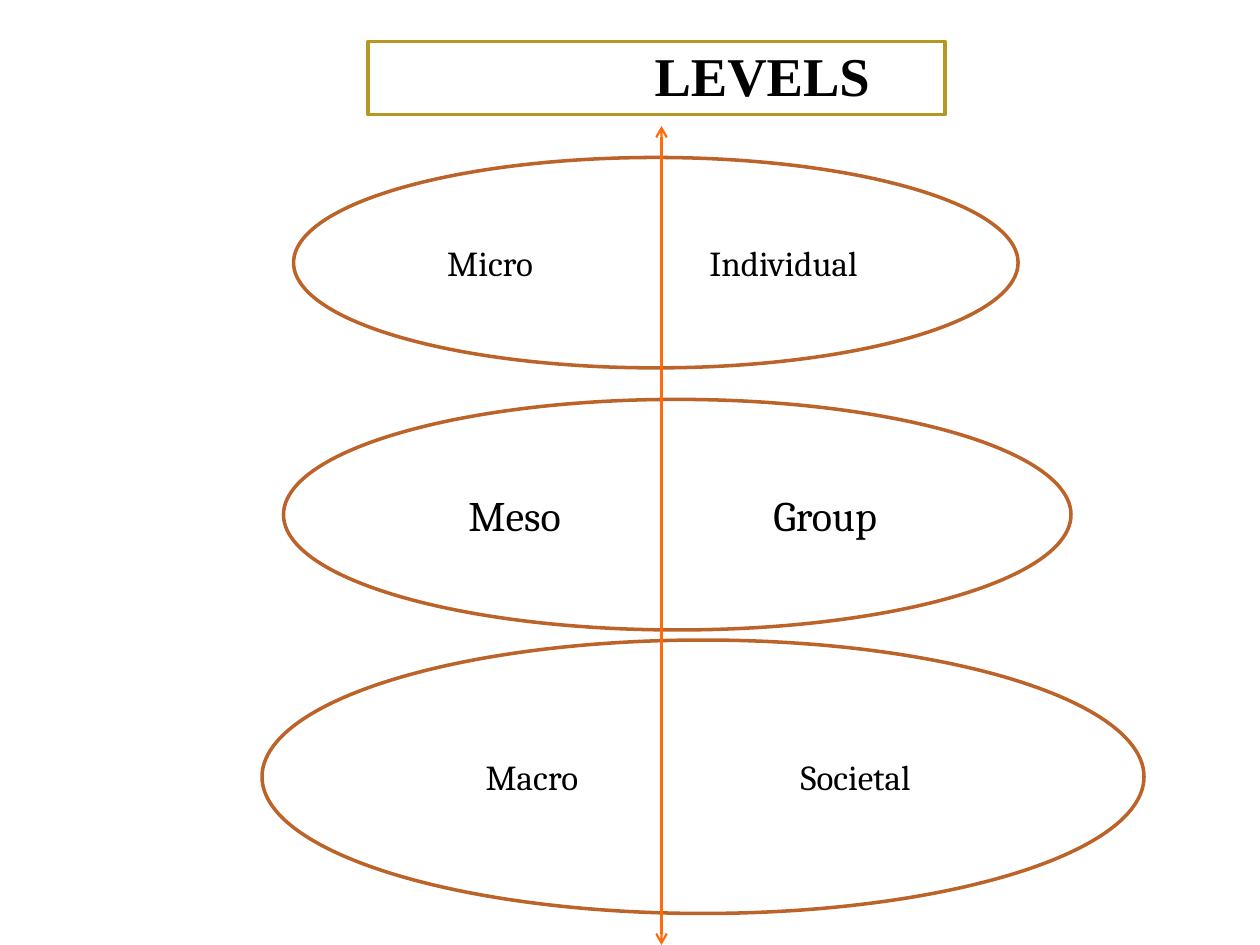
from lxml.etree import SubElement
from pptx import Presentation
from pptx.dml.color import RGBColor
from pptx.enum.shapes import MSO_CONNECTOR, MSO_SHAPE
from pptx.enum.text import MSO_ANCHOR, MSO_AUTO_SIZE, PP_ALIGN
from pptx.oxml.ns import qn
from pptx.util import Inches, Pt

BLACK = RGBColor(0x00, 0x00, 0x00)
GOLD = RGBColor(0xB5, 0x98, 0x21)
RUST = RGBColor(0xBC, 0x63, 0x29)
ORANGE = RGBColor(0xFF, 0x6B, 0x0A)
OVAL_INSET = 0.15
LEVELS = [
    ("Micro", "Individual", 20, (2.33, 1.25, 5.75, 1.67), (3.57, 5.65)),
    ("Macro", "Societal", 20, (2.08, 5.08, 7, 2.17), (3.88, 6.38)),
    ("Meso", "Group", 24, (2.25, 3.17, 6.25, 1.83), (3.74, 6.16)),
]


class Deck:
    """Holds the style and the current slide, and draws each kind of element."""

    def __init__(self):
        self.prs = Presentation()
        self.prs.slide_width = Inches(10)
        self.prs.slide_height = Inches(7.5)
        self.slide = self.prs.slides.add_slide(self.prs.slide_layouts[5])

    def border(self, shape, color, width):
        shape.line.color.rgb = color
        shape.line.width = Pt(width)

    def add_text(self, para, text, font, size, bold=False):
        run = para.add_run()
        run.text = text
        run.font.name = font
        run.font.size = Pt(size)
        run.font.bold = bold
        run.font.color.rgb = BLACK

    def title(self, text, box, inset):
        shape = self.slide.shapes.title
        shape.left, shape.top, shape.width, shape.height = map(Inches, box)
        self.border(shape, GOLD, 2)
        frame = shape.text_frame
        frame.auto_size = MSO_AUTO_SIZE.NONE
        frame.vertical_anchor = MSO_ANCHOR.BOTTOM
        frame.margin_left = Inches(inset)
        para = frame.paragraphs[0]
        para.alignment = PP_ALIGN.CENTER
        para.line_spacing = 0.9
        self.add_text(para, text, "Times New Roman", 31.2, True)

    def oval(self, scale, unit, size, box, starts):
        shape = self.slide.shapes.add_shape(MSO_SHAPE.OVAL, *map(Inches, box))
        shape.shadow.inherit = False
        shape.fill.background()
        self.border(shape, RUST, 2)
        left, _, width, _ = box
        first, second = starts
        frame = shape.text_frame
        frame.word_wrap = True
        frame.vertical_anchor = MSO_ANCHOR.MIDDLE
        frame.margin_left = Inches(first - left - OVAL_INSET * width)
        para = frame.paragraphs[0]
        para.alignment = PP_ALIGN.LEFT
        self.add_text(para, scale, "Cambria", size)
        self.add_text(para, "\t" + unit, "Cambria", size)
        tabs = SubElement(para._p.get_or_add_pPr(), qn("a:tabLst"))
        SubElement(tabs, qn("a:tab"), pos=str(Inches(second - first)), algn="l")

    def arrow(self, *ends):
        line = self.slide.shapes.add_connector(
            MSO_CONNECTOR.STRAIGHT, *map(Inches, ends))
        self.border(line, ORANGE, 1.25)
        for tag in ("a:headEnd", "a:tailEnd"):
            SubElement(line.line._get_or_add_ln(), qn(tag), type="arrow")
        SubElement(line._element.spPr, qn("a:effectLst"))


def main():
    deck = Deck()
    deck.title("LEVELS", (2.92, 0.33, 4.58, 0.58), 1.78)
    for level in LEVELS:
        deck.oval(*level)
    deck.arrow(5.25, 1, 5.25, 7.5)
    deck.prs.save("out.pptx")


if __name__ == "__main__":
    main()
